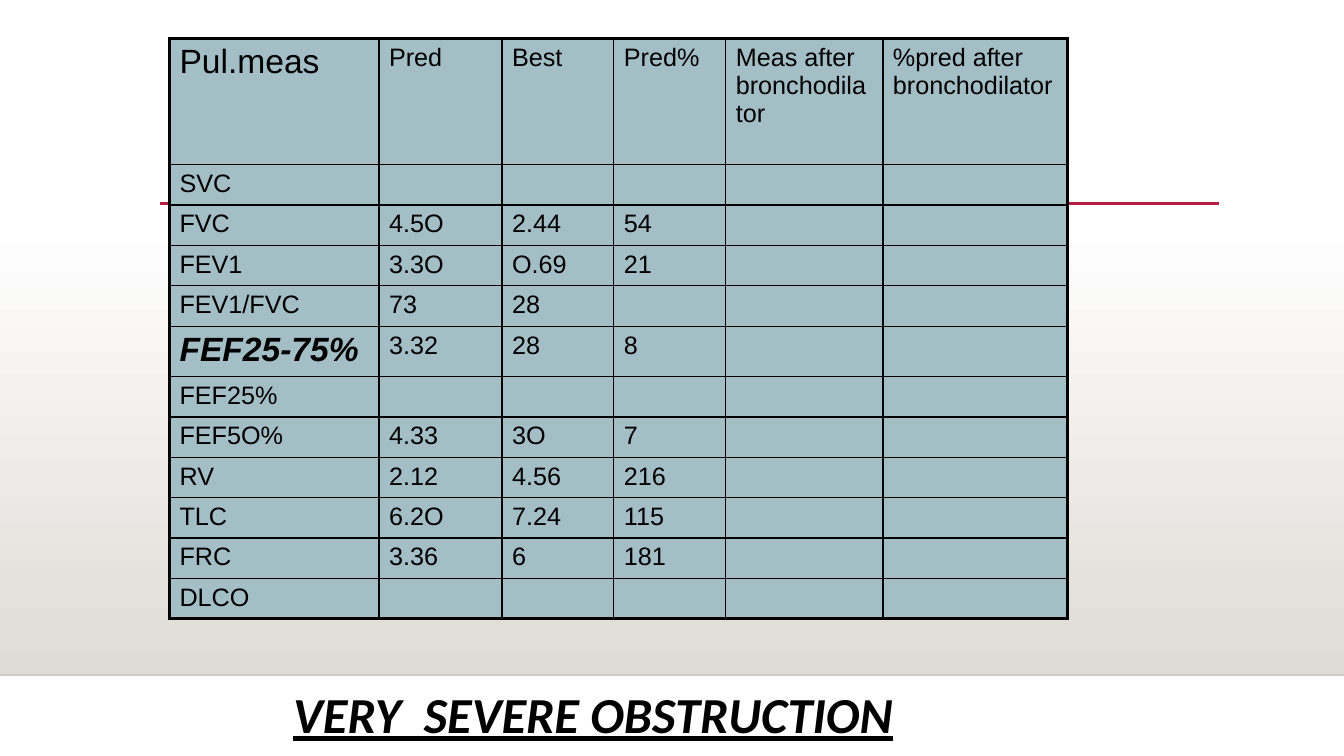
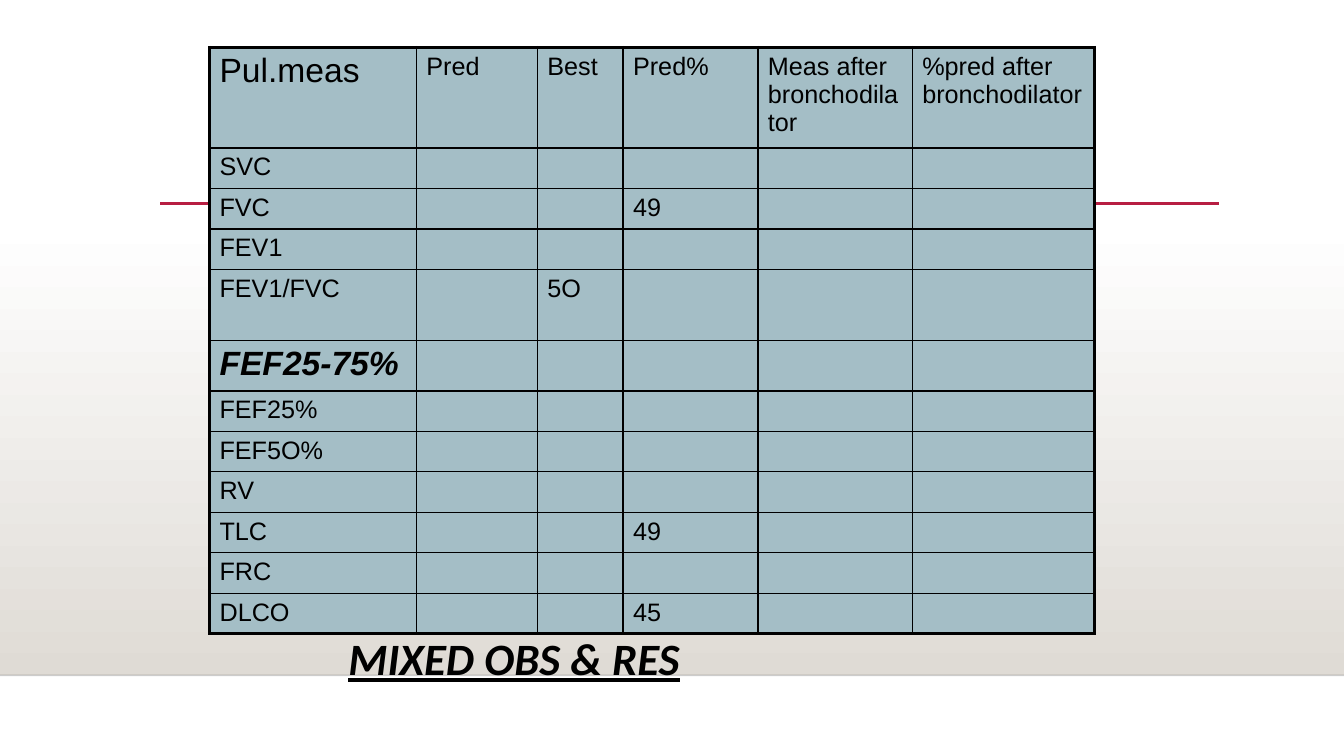
from dataclasses import dataclass
from lxml.etree import SubElement
from pptx import Presentation
from pptx.dml.color import RGBColor
from pptx.enum.shapes import MSO_CONNECTOR, MSO_SHAPE
from pptx.enum.text import MSO_ANCHOR
from pptx.oxml.ns import qn
from pptx.util import Cm, Pt


@dataclass(frozen=True)
class Theme:
    black: str = "000000"
    white: str = "FFFFFF"
    sand: str = "DFDBD5"
    red: str = "B71E42"
    cell: str = "A4BEC6"
    title_font: str = "Calibri"
    table_font: str = "Arial"
    body: int = 18
    large: int = 24
    inner: float = 1
    outer: float = 2.25


T = Theme()
W, H = 33.87, 19.05

HEADER = ["Pul.meas", "Pred", "Best", "Pred%",
          "Meas after bronchodilator", "%pred after bronchodilator"]
MEASURES = ["SVC", "FVC", "FEV1", "FEV1/FVC", "FEF25-75%", "FEF25%",
            "FEF5O%", "RV", "TLC", "FRC", "DLCO"]
STRESSED = "FEF25-75%"

SLIDES = [
    dict(title="VERY  SEVERE OBSTRUCTION", size=36, title_at=(7.14, 17.27),
         table_at=(4.27, 0.97), cols=[5.28, 3.1, 2.82, 2.82, 3.96, 4.65],
         head=3.18, row=0.97, tall={STRESSED: 1.21},
         values={"FVC": ["4.5O", "2.44", "54"],
                 "FEV1": ["3.3O", "O.69", "21"],
                 "FEV1/FVC": ["73", "28", ""],
                 STRESSED: ["3.32", "28", "8"],
                 "FEF5O%": ["4.33", "3O", "7"],
                 "RV": ["2.12", "4.56", "216"],
                 "TLC": ["6.2O", "7.24", "115"],
                 "FRC": ["3.36", "6", "181"]}),
    dict(title="MIXED OBS & RES", size=32, title_at=(8.53, 15.93),
         table_at=(5.28, 1.19), cols=[5.21, 3.05, 2.16, 3.4, 3.89, 4.6],
         head=2.54, row=1.02, tall={"FEV1/FVC": 1.78, STRESSED: 1.28},
         values={"FVC": ["", "", "49"],
                 "FEV1/FVC": ["", "5O", ""],
                 "TLC": ["", "", "49"],
                 "DLCO": ["", "", "45"]}),
]


def add_line(s, x1, x2, y, color, width, alpha=100):
    ln = s.shapes.add_connector(MSO_CONNECTOR.STRAIGHT, Cm(x1), Cm(y), Cm(x2), Cm(y))
    ln.line.color.rgb = RGBColor.from_string(color)
    ln.line.width = Pt(width)
    clr = ln.line._get_or_add_ln().find(".//" + qn("a:srgbClr"))
    SubElement(clr, qn("a:alpha"), val=str(alpha * 1000))
    SubElement(ln._element.spPr, qn("a:effectLst"))


def add_border(cell, side, width):
    ln = SubElement(cell._tc.get_or_add_tcPr(), qn("a:ln" + side), w=str(Pt(width)))
    fill = SubElement(ln, qn("a:solidFill"))
    SubElement(fill, qn("a:srgbClr"), val=T.black)


prs = Presentation()
prs.slide_width, prs.slide_height = Cm(W), Cm(H)

for d in SLIDES:
    s = prs.slides.add_slide(prs.slide_layouts[6])

    # Shaded floor and rules
    sp = s.shapes.add_shape(MSO_SHAPE.RECTANGLE, 0, Cm(5.61), Cm(W), Cm(11.4))
    sp.shadow.inherit = False
    sp.line.fill.background()
    sp.fill.gradient()
    sp.fill.gradient_angle = 270
    for stop, color in zip(sp.fill.gradient_stops, (T.white, T.sand)):
        stop.color.rgb = RGBColor.from_string(color)
    add_line(s, 0, W, 17.02, T.black, 1, alpha=20)
    add_line(s, 4.04, 30.73, 5.13, T.red, 2.5)

    # Title
    x, y = d["title_at"]
    tf = s.shapes.add_textbox(Cm(x), Cm(y), Cm(24), Cm(1.78)).text_frame
    tf.word_wrap = True
    tf.vertical_anchor = MSO_ANCHOR.TOP
    p = tf.paragraphs[0]
    p.line_spacing = 0.9
    r = p.add_run()
    r.text = d["title"]
    r.font.name, r.font.size = T.title_font, Pt(d["size"])
    r.font.bold = r.font.italic = r.font.underline = True
    r.font.color.rgb = RGBColor.from_string(T.black)

    # Table grid
    rows = [HEADER] + [[m] + d["values"].get(m, [""] * 3) + [""] * 2 for m in MEASURES]
    heights = [d["head"]] + [d["tall"].get(m, d["row"]) for m in MEASURES]
    x, y = d["table_at"]
    tbl = s.shapes.add_table(len(rows), len(HEADER), Cm(x), Cm(y),
                             Cm(sum(d["cols"])), Cm(sum(heights))).table
    for col, width in zip(tbl.columns, d["cols"]):
        col.width = Cm(width)
    for row, height in zip(tbl.rows, heights):
        row.height = Cm(height)

    # Table cells
    for i, texts in enumerate(rows):
        for j, text in enumerate(texts):
            cell = tbl.cell(i, j)
            edges = {"L": j == 0, "R": j == len(HEADER) - 1,
                     "T": i == 0, "B": i == len(rows) - 1}
            for side, is_outer in edges.items():
                add_border(cell, side, T.outer if is_outer else T.inner)
            cell.fill.solid()
            cell.fill.fore_color.rgb = RGBColor.from_string(T.cell)
            p = cell.text_frame.paragraphs[0]
            if not text:
                p.font.size = Pt(T.body)
                continue
            r = p.add_run()
            r.text = text
            r.font.name = T.table_font
            r.font.size = Pt(T.large if text in (HEADER[0], STRESSED) else T.body)
            r.font.bold = r.font.italic = text == STRESSED
            r.font.color.rgb = RGBColor.from_string(T.black)

prs.save("out.pptx")
